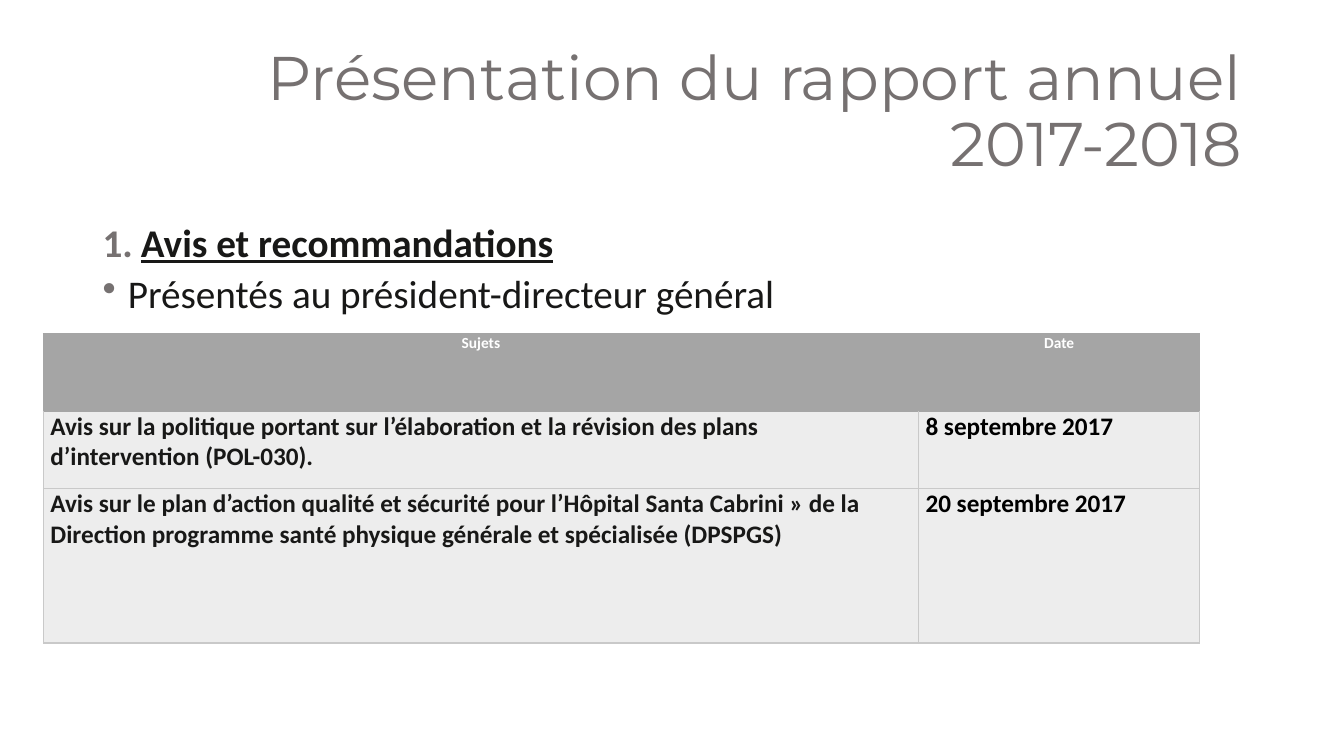
"""Build the slide on opinions and recommendations in the 2017-2018 annual report."""
from lxml import etree
from pptx import Presentation
from pptx.dml.color import RGBColor
from pptx.enum import text
from pptx.oxml import ns
from pptx.util import Inches, Pt

COLORS = {
    "grey": "767171", "ink": "181817", "black": "000000", "white": "FFFFFF",
    "header": "A5A5A5", "cell": "EDEDED", "border": "C9C9C9",
}


def add_solid_color(parent, tag, color):
    element = etree.SubElement(parent, ns.qn(tag))
    etree.SubElement(element, ns.qn("a:srgbClr"), val=COLORS[color])


def set_font(paragraph, name, size, color, bold=False):
    paragraph.font.name = name
    paragraph.font.size = Pt(size)
    paragraph.font.bold = bold
    paragraph.font.color.rgb = RGBColor.from_string(COLORS[color])


presentation = Presentation()
presentation.slide_width = Inches(13.33)
presentation.slide_height = Inches(7.5)
slide = presentation.slides.add_slide(presentation.slide_layouts[5])

title = slide.shapes.title
title.left, title.top = Inches(1.94), Inches(0.4)
title.width, title.height = Inches(10.48), Inches(1.45)
title_frame = title.text_frame
title_frame.text = "Présentation du rapport annuel 2017-2018"
title_frame.word_wrap = True
title_frame.auto_size = text.MSO_AUTO_SIZE.NONE
title_frame.vertical_anchor = text.MSO_ANCHOR.MIDDLE
paragraph = title_frame.paragraphs[0]
paragraph.alignment = text.PP_ALIGN.RIGHT
paragraph.line_spacing = 0.9
set_font(paragraph, "Montserrat", 44, "grey")

body = slide.shapes.add_textbox(Inches(0.92), Inches(2.17), Inches(11.5), Inches(4.32))
body_frame = body.text_frame
body_frame.word_wrap = True
body_frame.text = "Avis et recommandations\nPrésentés au président-directeur général"
bullets = [
    (0.38, "a:buAutoNum", {"type": "arabicPeriod"}),
    (0.25, "a:buChar", {"char": "•"}),
]
for paragraph, (indent, tag, attributes) in zip(body_frame.paragraphs, bullets):
    properties = paragraph._p.get_or_add_pPr()
    properties.set("marL", str(Inches(indent)))
    properties.set("indent", str(-Inches(indent)))
    add_solid_color(properties, "a:buClr", "grey")
    etree.SubElement(properties, ns.qn(tag), attributes)
    paragraph.line_spacing = 0.9
    set_font(paragraph, "Calibri", 28, "ink")
heading, subheading = body_frame.paragraphs
heading.font.bold = True
heading.font.underline = True
subheading.space_before = subheading.space_after = Pt(6)

rows = [
    ("Sujets", "Date"),
    ("Avis sur la politique portant sur l’élaboration et la révision des plans "
     "d’intervention (POL-030).", "8 septembre 2017"),
    ("Avis sur le plan d’action qualité et sécurité pour l’Hôpital Santa Cabrini » de la "
     "Direction programme santé physique générale et spécialisée (DPSPGS)",
     "20 septembre 2017"),
]
table = slide.shapes.add_table(
    len(rows), 2, Inches(0.43), Inches(3.31), Inches(11.47), Inches(3.07)).table
for column, width in zip(table.columns, (8.68, 2.79)):
    column.width = Inches(width)
for row, height in zip(table.rows, (0.77, 0.77, 1.53)):
    row.height = Inches(height)

for row_index, row in enumerate(rows):
    is_header = row_index == 0
    for column_index, wording in enumerate(row):
        cell = table.cell(row_index, column_index)
        cell.text = wording
        cell.margin_left = cell.margin_right = Inches(0.07)
        cell.margin_top = cell.margin_bottom = 0
        for side in ("L", "R", "T", "B"):
            border = etree.SubElement(
                cell._tc.get_or_add_tcPr(), ns.qn("a:ln" + side), w=str(Pt(1)))
            header_edge = is_header or (row_index == 1 and side == "T")
            add_solid_color(border, "a:solidFill", "header" if header_edge else "border")
        cell.fill.solid()
        cell.fill.fore_color.rgb = RGBColor.from_string(
            COLORS["header" if is_header else "cell"])
        paragraph = cell.text_frame.paragraphs[0]
        if is_header:
            paragraph.alignment = text.PP_ALIGN.CENTER
            set_font(paragraph, "Calibri", 11, "white", bold=True)
        else:
            set_font(paragraph, "Calibri", 18, ("ink", "black")[column_index], bold=True)

presentation.save("out.pptx")
